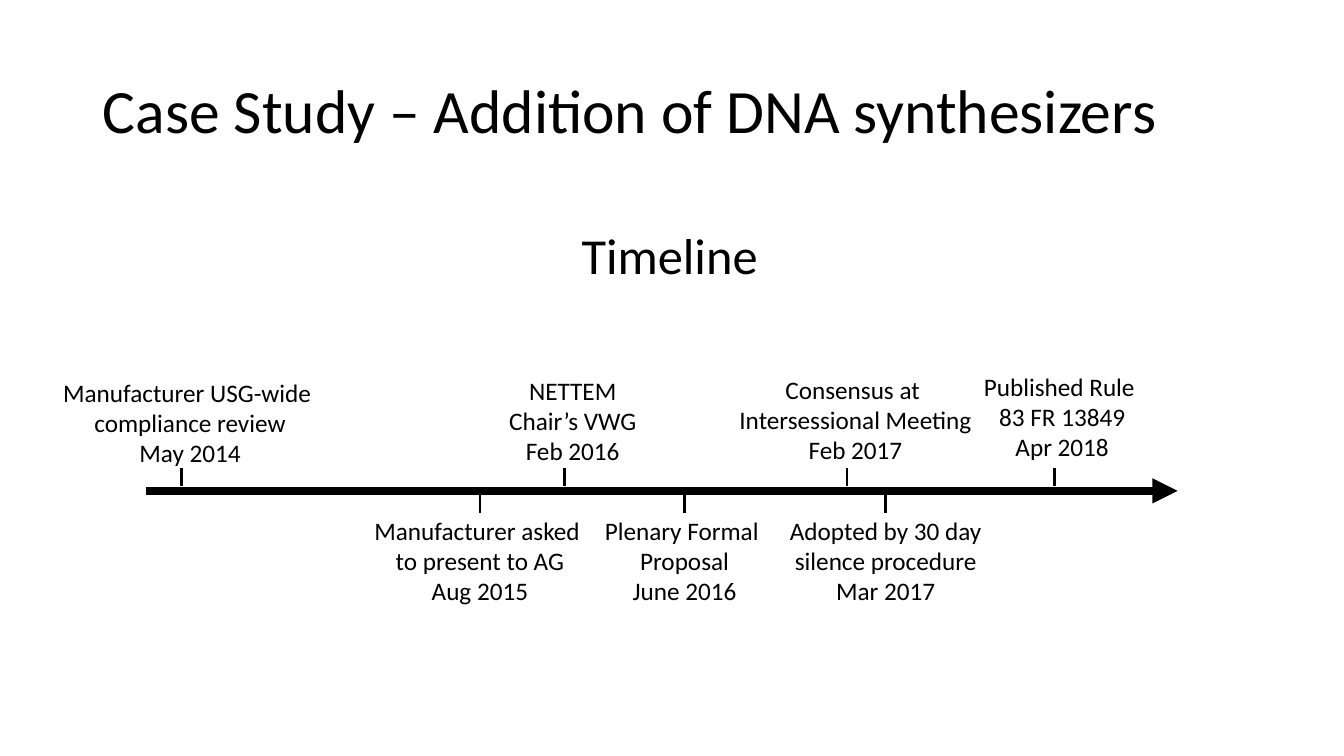
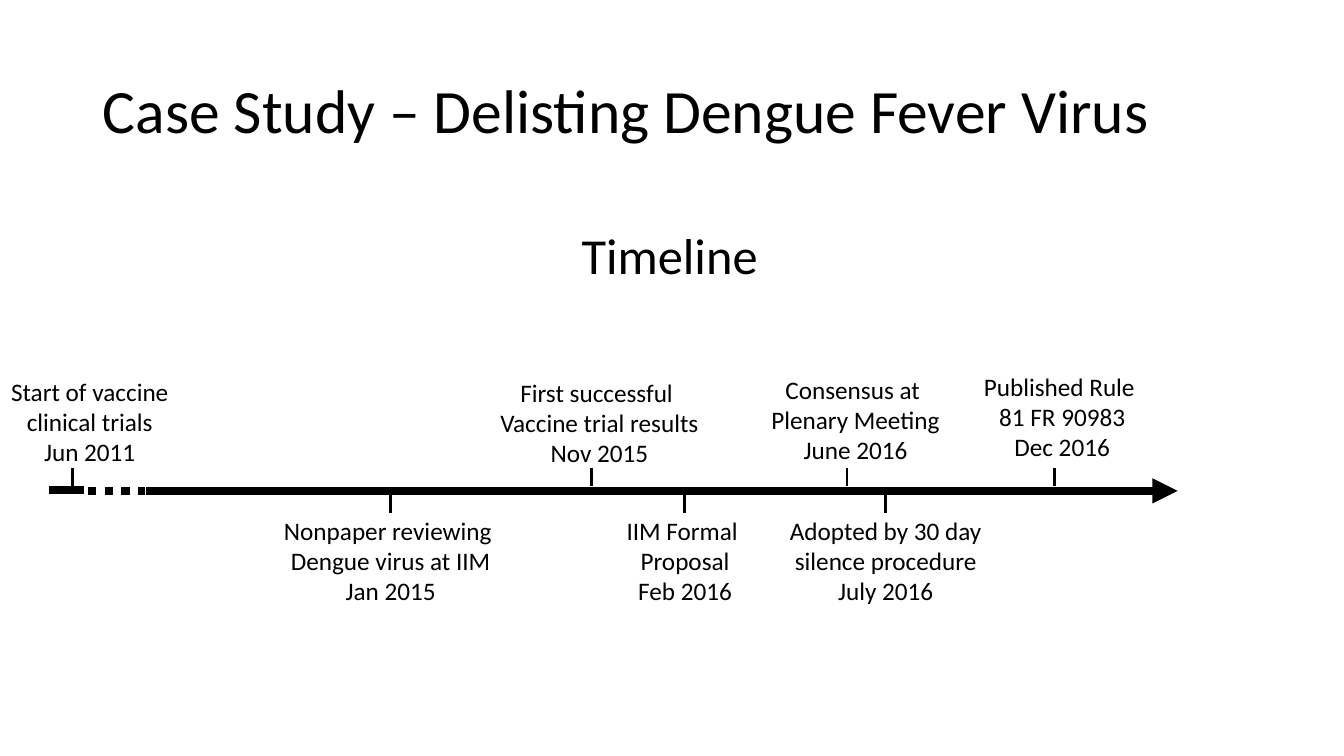
import pptx
import pptx.util
from lxml import etree
from pptx.dml.color import RGBColor
from pptx.enum.dml import MSO_LINE
from pptx.enum.shapes import MSO_CONNECTOR
from pptx.enum.text import MSO_ANCHOR, MSO_AUTO_SIZE, PP_ALIGN
from pptx.oxml.ns import qn

PX = 9144  # EMU per px, 100 px to the inch
BLACK = RGBColor(0, 0, 0)
WHITE = RGBColor(255, 255, 255)
AXIS_Y = 487


def px(*lengths):
    return [pptx.util.Emu(n * PX) for n in lengths]


class Deck:
    font = "Calibri"
    title_size, heading_size, label_size = 44, 36, 18
    axis_width, tick_width = 6, 2
    ticks = {"above": (464, 482), "below": (490, 509)}
    below_top = 506

    def __init__(self):
        self.prs = pptx.Presentation()
        self.prs.slide_width, self.prs.slide_height = px(1333, 750)
        self.s = None

    def add_run(self, p, text, size, align=PP_ALIGN.LEFT):
        p.alignment = align
        r = p.add_run()
        r.text = text
        r.font.name = self.font
        r.font.size = pptx.util.Pt(size)
        r.font.color.rgb = BLACK

    def slide(self, title):
        """Start a slide with the title, the heading and the time axis."""
        self.s = self.prs.slides.add_slide(self.prs.slide_layouts[5])
        fill = self.s.background.fill
        fill.solid()
        fill.fore_color.rgb = WHITE
        sp = self.s.shapes.title
        sp.left, sp.top, sp.width, sp.height = px(92, 40, 1150, 145)
        tf = sp.text_frame
        tf.auto_size = MSO_AUTO_SIZE.NONE
        tf.vertical_anchor = MSO_ANCHOR.MIDDLE
        p = tf.paragraphs[0]
        p.line_spacing = 0.9
        self.add_run(p, title, self.title_size)
        self.text(567, 217, 294, 71, ["Timeline"], self.heading_size, wrap=True)
        self.line(145, AXIS_Y, 1168, AXIS_Y, self.axis_width, arrow=True)

    def text(self, x, y, w, h, lines, size, align=PP_ALIGN.LEFT, wrap=False):
        tf = self.s.shapes.add_textbox(*px(x, y, w, h)).text_frame
        tf.word_wrap = wrap
        tf.auto_size = MSO_AUTO_SIZE.SHAPE_TO_FIT_TEXT
        for i, line in enumerate(lines):
            p = tf.add_paragraph() if i else tf.paragraphs[0]
            self.add_run(p, line, size, align)

    def line(self, x1, y1, x2, y2, width, arrow=False, dash=None):
        sp = self.s.shapes.add_connector(MSO_CONNECTOR.STRAIGHT, *px(x1, y1, x2, y2))
        sp.line.width = pptx.util.Pt(width)
        sp.line.color.rgb = BLACK
        if dash:
            sp.line.dash_style = dash
        props = sp.element.spPr
        if arrow:
            etree.SubElement(props.find(qn("a:ln")), qn("a:tailEnd"), type="triangle")
        etree.SubElement(props, qn("a:effectLst"))

    def event(self, tick_x, x, w, lines, top=None):
        """Add a tick and its label: above the axis if top is given, else below."""
        y1, y2 = self.ticks["above" if top else "below"]
        self.line(tick_x, y1, tick_x, y2, self.tick_width)
        self.text(x, top or self.below_top, w, 101, lines, self.label_size, PP_ALIGN.CENTER)

    def final_events(self, adopted, rule, published):
        """Add the two closing steps that every case goes through."""
        self.event(878, 772, 213, ["Adopted by 30 day", "silence procedure", adopted])
        self.event(1046, 965, 177, ["Published Rule ", rule, published], 363)


def main():
    deck = Deck()

    deck.slide("Case Study – Addition of DNA synthesizers")
    deck.event(180, 51, 275, ["Manufacturer USG-wide ", "compliance review", "May 2014"], 369)
    deck.event(476, 360, 232, ["Manufacturer asked ", "to present to AG", "Aug 2015"])
    deck.event(560, 494, 148, ["NETTEM", "Chair’s VWG", "Feb 2016"], 367)
    deck.event(679, 589, 180, ["Plenary Formal ", "Proposal", "June 2016"])
    deck.event(840, 722, 253, ["Consensus at ", "Intersessional Meeting", "Feb 2017"], 366)
    deck.final_events("Mar 2017", "83 FR 13849", "Apr 2018")

    deck.slide("Case Study – Delisting Dengue Fever Virus")
    deck.line(49, AXIS_Y - 1, 83, AXIS_Y - 1, deck.axis_width)
    deck.line(87, AXIS_Y, 144, AXIS_Y, deck.axis_width, dash=MSO_LINE.ROUND_DOT)
    deck.event(72, 0, 178, ["Start of vaccine", "clinical trials", "Jun 2011"], 368)
    deck.event(387, 270, 235, ["Nonpaper reviewing ", "Dengue virus at IIM", "Jan 2015"])
    deck.event(587, 485, 219, ["First successful ", "Vaccine trial results", "Nov 2015"], 369)
    deck.event(679, 611, 137, ["IIM Formal ", "Proposal", "Feb 2016"])
    deck.event(840, 754, 189, ["Consensus at ", "Plenary Meeting", "June 2016"], 366)
    deck.final_events("July 2016", "81 FR 90983", "Dec 2016")

    deck.prs.save("out.pptx")


if __name__ == "__main__":
    main()
